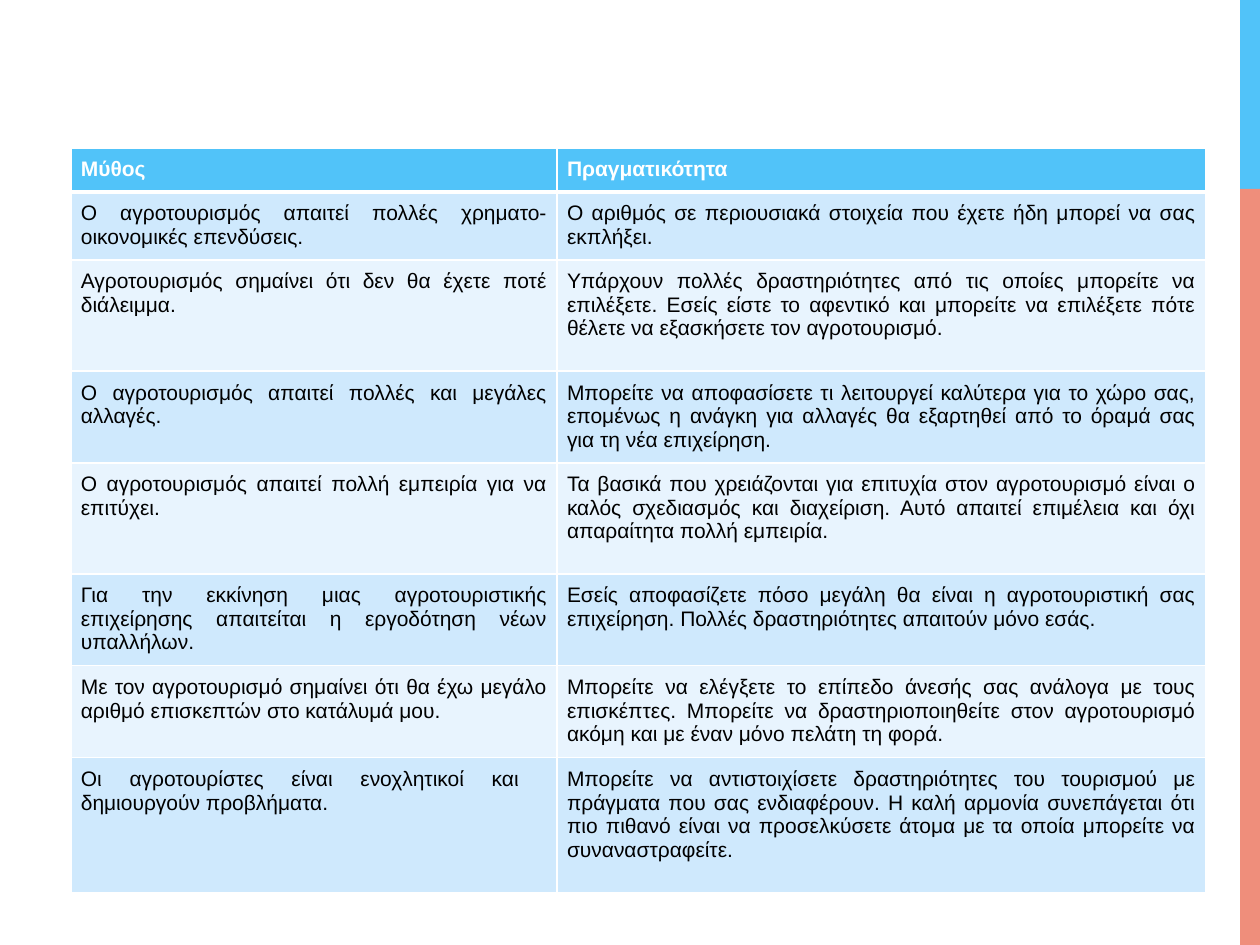
import pptx
import pptx.dml.color
import pptx.enum.shapes
import pptx.enum.text
import pptx.oxml
import pptx.oxml.ns
import pptx.util
from pptx.util import Cm

RGBColor = pptx.dml.color.RGBColor
BLUE = RGBColor(0x51, 0xC3, 0xF9)
CORAL = RGBColor(0xEF, 0x8E, 0x7B)
ODD_ROW = RGBColor(0xCF, 0xE9, 0xFD)
EVEN_ROW = RGBColor(0xE8, 0xF4, 0xFE)
WHITE = RGBColor(0xFF, 0xFF, 0xFF)
BLACK = RGBColor(0, 0, 0)

FONT = "Arial"
SLIDE_WIDTH, SLIDE_HEIGHT = Cm(25.4), Cm(19.05)
BAR_WIDTH, BLUE_BAR_HEIGHT = Cm(0.4), Cm(3.81)
TABLE_LEFT, TABLE_TOP = Cm(1.43), Cm(2.98)
COLUMN_WIDTHS = [Cm(9.8), Cm(13.08)]
CELL_MARGIN = Cm(0.2)

# Row height in centimetres, myth, reality
ROWS = [
    (0.89, "Μύθος", "Πραγματικότητα"),
    (1.37, "Ο αγροτουρισμός απαιτεί πολλές χρηματο-οικονομικές επενδύσεις.",
     "Ο αριθμός σε περιουσιακά στοιχεία που έχετε ήδη μπορεί να σας εκπλήξει."),
    (2.24, "Αγροτουρισμός σημαίνει ότι δεν θα έχετε ποτέ διάλειμμα.",
     "Υπάρχουν πολλές δραστηριότητες από τις οποίες μπορείτε να επιλέξετε. "
     "Εσείς είστε το αφεντικό και μπορείτε να επιλέξετε πότε θέλετε να "
     "εξασκήσετε τον αγροτουρισμό."),
    (1.85, "Ο αγροτουρισμός απαιτεί πολλές και μεγάλες αλλαγές.",
     "Μπορείτε να αποφασίσετε τι λειτουργεί καλύτερα για το χώρο σας, "
     "επομένως η ανάγκη για αλλαγές θα εξαρτηθεί από το όραμά σας για τη "
     "νέα επιχείρηση."),
    (2.24, "Ο αγροτουρισμός απαιτεί πολλή εμπειρία για να επιτύχει.",
     "Τα βασικά που χρειάζονται για επιτυχία στον αγροτουρισμό είναι ο καλός "
     "σχεδιασμός και διαχείριση. Αυτό απαιτεί επιμέλεια και όχι απαραίτητα "
     "πολλή εμπειρία."),
    (1.85, "Για την εκκίνηση μιας αγροτουριστικής επιχείρησης απαιτείται η "
     "εργοδότηση νέων υπαλλήλων.",
     "Εσείς αποφασίζετε πόσο μεγάλη θα είναι η αγροτουριστική σας επιχείρηση. "
     "Πολλές δραστηριότητες απαιτούν μόνο εσάς."),
    (1.85, "Με τον αγροτουρισμό σημαίνει ότι θα έχω μεγάλο αριθμό επισκεπτών "
     "στο κατάλυμά μου.",
     "Μπορείτε να ελέγξετε το επίπεδο άνεσής σας ανάλογα με τους επισκέπτες. "
     "Μπορείτε να δραστηριοποιηθείτε στον αγροτουρισμό ακόμη και με έναν μόνο "
     "πελάτη τη φορά."),
    (2.72, "Οι αγροτουρίστες είναι ενοχλητικοί και  δημιουργούν προβλήματα.",
     "Μπορείτε να αντιστοιχίσετε δραστηριότητες του τουρισμού με πράγματα που "
     "σας ενδιαφέρουν. Η καλή αρμονία συνεπάγεται ότι πιο πιθανό είναι να "
     "προσελκύσετε άτομα με τα οποία μπορείτε να συναναστραφείτε."),
]


def add_side_bar(slide, top, height, color):
    bar = slide.shapes.add_shape(
        pptx.enum.shapes.MSO_SHAPE.RECTANGLE,
        SLIDE_WIDTH - BAR_WIDTH, top, BAR_WIDTH, height)
    bar.shadow.inherit = False
    bar.fill.solid()
    bar.fill.fore_color.rgb = color
    bar.line.fill.background()


def set_borders(cell, top, bottom):
    """Draw white borders; the top and bottom widths are in points."""
    properties = cell._tc.get_or_add_tcPr()
    widths = {"lnL": 1, "lnR": 1, "lnT": top, "lnB": bottom}
    # The schema wants the borders ahead of the cell fill.
    for position, (side, width) in enumerate(widths.items()):
        border = pptx.oxml.parse_xml(
            f'<a:{side} {pptx.oxml.ns.nsdecls("a")} w="{pptx.util.Pt(width)}">'
            f'<a:solidFill><a:srgbClr val="{WHITE}"/></a:solidFill></a:{side}>')
        properties.insert(position, border)


def fill_cell(cell, text, row_index):
    is_header = row_index == 0
    cell.margin_left = cell.margin_right = CELL_MARGIN
    cell.margin_top = cell.margin_bottom = CELL_MARGIN
    cell.fill.solid()
    cell.fill.fore_color.rgb = (
        BLUE if is_header else ODD_ROW if row_index % 2 else EVEN_ROW)
    set_borders(cell, top=3 if row_index == 1 else 1, bottom=3 if is_header else 1)

    cell.text_frame.text = text
    paragraph = cell.text_frame.paragraphs[0]
    paragraph.alignment = pptx.enum.text.PP_ALIGN.JUSTIFY
    font = paragraph.runs[0].font
    font.name = FONT
    font.size = pptx.util.Pt(12)
    font.bold = is_header
    font.color.rgb = WHITE if is_header else BLACK


def add_myth_table(slide):
    heights = [Cm(height) for height, *_ in ROWS]
    table = slide.shapes.add_table(
        len(ROWS), len(COLUMN_WIDTHS), TABLE_LEFT, TABLE_TOP,
        sum(COLUMN_WIDTHS), sum(heights)).table
    for column, width in zip(table.columns, COLUMN_WIDTHS):
        column.width = width
    for row_index, (_, *texts) in enumerate(ROWS):
        table.rows[row_index].height = heights[row_index]
        for column_index, text in enumerate(texts):
            fill_cell(table.cell(row_index, column_index), text, row_index)


def main():
    presentation = pptx.Presentation()
    presentation.slide_width = SLIDE_WIDTH
    presentation.slide_height = SLIDE_HEIGHT
    slide = presentation.slides.add_slide(presentation.slide_layouts[6])
    add_side_bar(slide, 0, BLUE_BAR_HEIGHT, BLUE)
    add_side_bar(slide, BLUE_BAR_HEIGHT, SLIDE_HEIGHT - BLUE_BAR_HEIGHT, CORAL)
    add_myth_table(slide)
    presentation.save("out.pptx")


if __name__ == "__main__":
    main()
